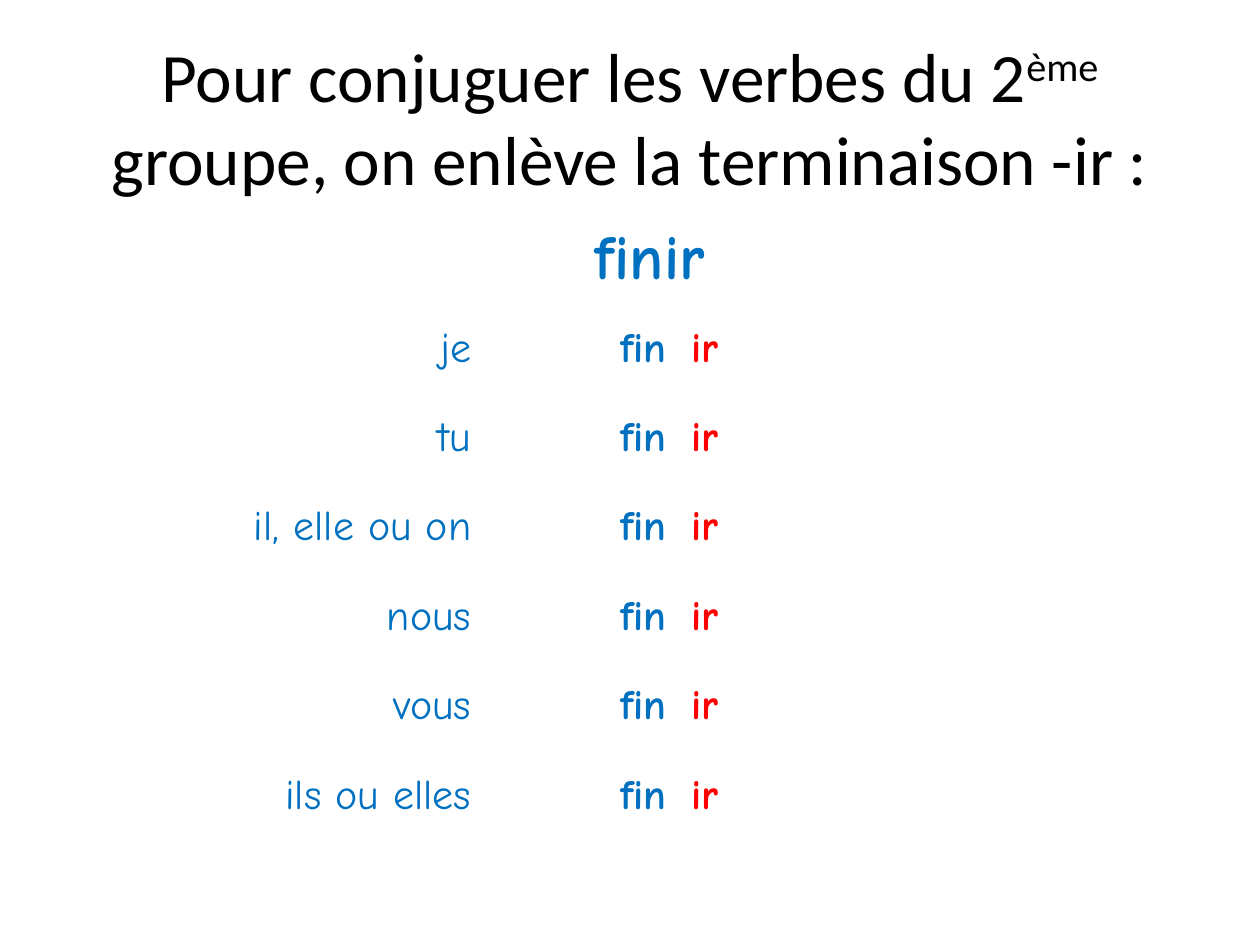
"""Build a slide on removing the -ir ending of second-group French verbs."""
from pptx import Presentation
from pptx import util as u
from pptx.dml.color import RGBColor
from pptx.enum import text

COLORS = {"black": "000000", "blue": "0070C0", "red": "FF0000", "white": "FFFFFF"}
ALIGN = text.PP_ALIGN
PRONOUNS = ["je", "tu", "il, elle ou on", "nous", "vous", "ils ou elles"]
COLUMN_WIDTHS = [2.62, 1.55, 3.7]
ROW_HEIGHT = 0.71


def add_span(para, content, size=24, color="blue", bold=False,
             font="Comic Neue", baseline=0):
    """Append a formatted run to a paragraph."""
    span = para.add_run()
    span.text = content
    span.font.name = font
    span.font.size = u.Pt(size)
    span.font.bold = bold
    span.font.color.rgb = RGBColor.from_string(COLORS[color])
    if baseline:
        span._r.get_or_add_rPr().set("baseline", str(baseline * 1000))


def fill_cell(cell, content, align=ALIGN.LEFT, **style):
    """Write text in a white, vertically centred cell."""
    cell.fill.solid()
    cell.fill.fore_color.rgb = RGBColor.from_string(COLORS["white"])
    cell.vertical_anchor = text.MSO_ANCHOR.MIDDLE
    para = cell.text_frame.paragraphs[0]
    para.alignment = align
    add_span(para, content, **style)


def add_title(page):
    """Fill the title placeholder, with a superscript ordinal."""
    box = page.shapes.title
    box.left, box.top = u.Inches(0.5), u.Inches(0.3)
    box.width, box.height = u.Inches(9), u.Inches(1.25)
    frame = box.text_frame
    frame.word_wrap = True
    frame.auto_size = text.MSO_AUTO_SIZE.NONE
    frame.vertical_anchor = text.MSO_ANCHOR.MIDDLE
    para = frame.paragraphs[0]
    para.alignment = ALIGN.CENTER
    for content, baseline in [("Pour conjuguer les verbes du 2", 0), ("ème ", 30),
                              ("groupe, on enlève la terminaison -ir :", 0)]:
        add_span(para, content, size=39.6, color="black", font="Calibri",
                 baseline=baseline)


def add_conjugation(page):
    """Add the table of pronouns, stems and endings under the infinitive."""
    rows = len(PRONOUNS) + 1
    table = page.shapes.add_table(
        rows, len(COLUMN_WIDTHS), u.Inches(1.22), u.Inches(1.7),
        u.Inches(sum(COLUMN_WIDTHS)), u.Inches(rows * ROW_HEIGHT)).table
    for column, width in zip(table.columns, COLUMN_WIDTHS):
        column.width = u.Inches(width)
    for row in table.rows:
        row.height = u.Inches(ROW_HEIGHT)
    heading = table.cell(0, 0)
    heading.merge(table.cell(0, len(COLUMN_WIDTHS) - 1))
    fill_cell(heading, "finir", ALIGN.CENTER, size=36, bold=True)
    for index, pronoun in enumerate(PRONOUNS, start=1):
        fill_cell(table.cell(index, 0), pronoun, ALIGN.RIGHT)
        fill_cell(table.cell(index, 1), "fin", ALIGN.RIGHT, bold=True)
        fill_cell(table.cell(index, 2), "ir", color="red", bold=True)


def main():
    """Create and save the deck."""
    deck = Presentation()
    deck.slide_width, deck.slide_height = u.Inches(10), u.Inches(7.5)
    page = deck.slides.add_slide(deck.slide_layouts[5])
    add_title(page)
    add_conjugation(page)
    deck.save("out.pptx")


if __name__ == "__main__":
    main()
